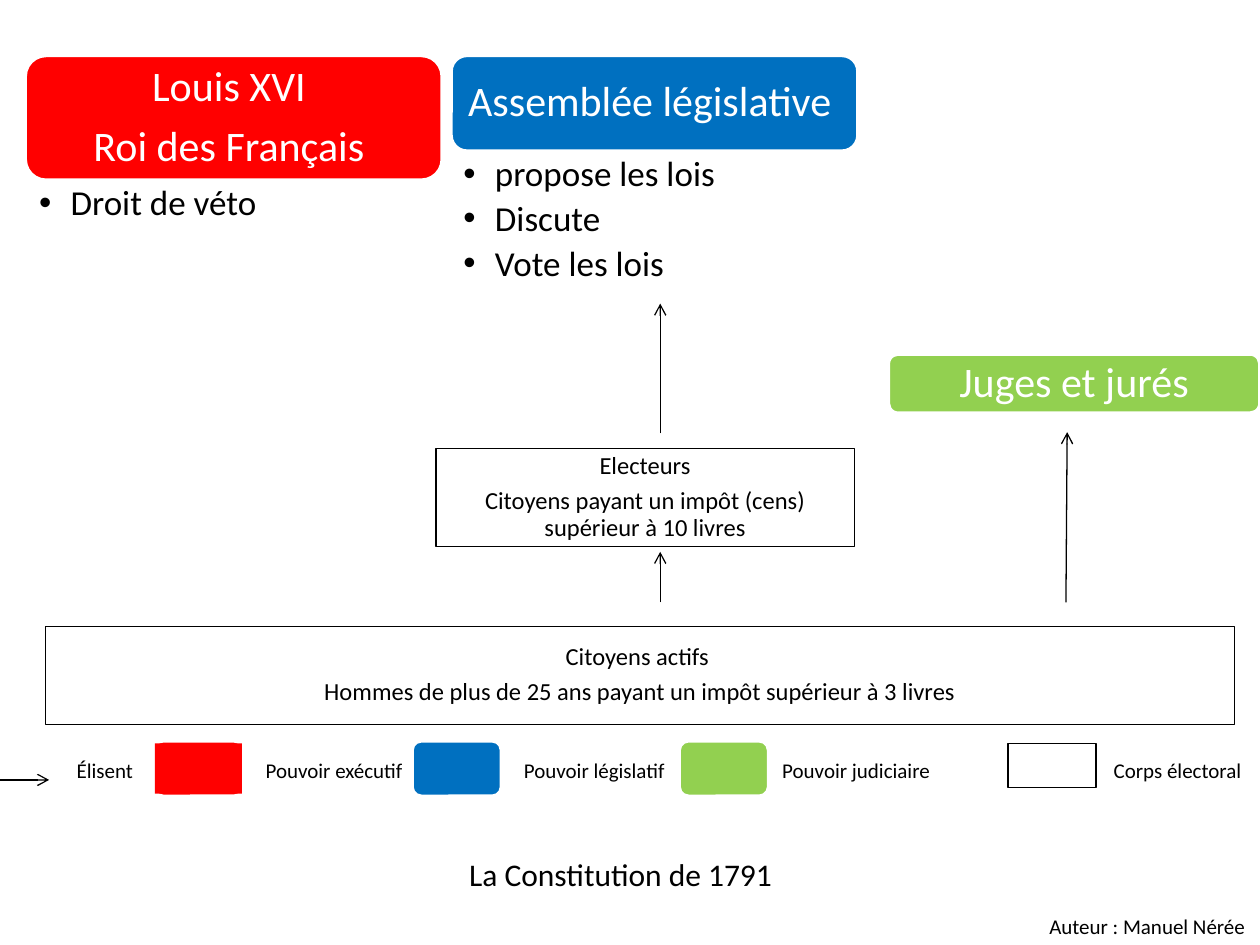
"""Builds a one-slide diagram of the French Constitution of 1791."""
from lxml import etree
from pptx import Presentation
from pptx.dml.color import RGBColor
from pptx.enum.shapes import MSO_CONNECTOR, MSO_SHAPE
from pptx.enum.text import MSO_ANCHOR, PP_ALIGN
from pptx.oxml.ns import qn
from pptx.util import Inches, Pt

ROUND, RECT = MSO_SHAPE.ROUNDED_RECTANGLE, MSO_SHAPE.RECTANGLE
STRAIGHT = MSO_CONNECTOR.STRAIGHT
LEFT, CENTER = PP_ALIGN.LEFT, PP_ALIGN.CENTER
TOP, MIDDLE = MSO_ANCHOR.TOP, MSO_ANCHOR.MIDDLE
RED = RGBColor(0xFF, 0x00, 0x00)
BLUE = RGBColor(0x00, 0x70, 0xC0)
GREEN = RGBColor(0x92, 0xD0, 0x50)
WHITE = RGBColor(0xFF, 0xFF, 0xFF)
BLACK = RGBColor(0x00, 0x00, 0x00)

deck = Presentation()
deck.slide_width, deck.slide_height = Inches(10), Inches(7.5)
CELL = deck.slide_width / 100
slide = deck.slides.add_slide(deck.slide_layouts[6])
shapes = slide.shapes


def draw(kind, area, fill=None, line=None, width=0.75):
    spot = [round(n * CELL) for n in area]
    box = shapes.add_shape(kind, *spot) if kind else shapes.add_textbox(*spot)
    if kind:
        box.shadow.inherit = False
        if fill is None:
            box.fill.background()
        else:
            box.fill.solid()
            box.fill.fore_color.rgb = fill
        if line is None:
            box.line.fill.background()
        else:
            box.line.color.rgb = line
            box.line.width = Pt(width)
    return box


def write(text, box, size=12, color=BLACK, align=LEFT, anchor=TOP, wrap=True,
          pad=(1, 0.5, 1, 0.5), lead=None, after=None, bullet=False):
    frame = box.text_frame
    frame.word_wrap, frame.vertical_anchor = wrap, anchor
    (frame.margin_left, frame.margin_top,
     frame.margin_right, frame.margin_bottom) = [round(n * CELL) for n in pad]
    for i, words in enumerate(text.split("\n")):
        para = frame.add_paragraph() if i else frame.paragraphs[0]
        para.alignment = align
        if lead:
            para.line_spacing, para.space_after = lead, Pt(after)
        if bullet:
            props = para._p.get_or_add_pPr()
            props.set("marL", str(Inches(0.25)))
            props.set("indent", str(-Inches(0.25)))
            etree.SubElement(props, qn("a:buFont")).set("typeface", "Arial")
            etree.SubElement(props, qn("a:buChar")).set("char", "•")
        run = para.add_run()
        run.text = words
        run.font.name, run.font.size = "Calibri", Pt(size)
        run.font.color.rgb = color


powers = [
    ("Louis XVI \nRoi des Français ", (2, 4.4, 33.1, 9.9), RED),
    ("Assemblée législative ", (35.8, 4.4, 32.3, 7.6), BLUE),
    ("Juges et jurés", (70.5, 28.1, 29.5, 4.7), GREEN),
]
for text, area, fill in powers:
    write(text, draw(ROUND, area, fill, WHITE, 2), size=24, color=WHITE,
          align=CENTER, anchor=MIDDLE, pad=[1] * 4, lead=0.9, after=8.4)

roles = [
    ("Droit de véto", (2, 14.4, 33.1, 7.2), 1.1),
    ("propose les lois\nDiscute\nVote les lois", (35.8, 12.1, 32.3, 11.2), 1),
]
for text, area, left in roles:
    write(text, draw(None, area), size=20, pad=(left, 0.3, 1.6, 0.3),
          lead=0.9, after=4, bullet=True)

voters = [
    ("Citoyens actifs \n"
     "Hommes de plus de 25 ans payant un impôt supérieur à 3 livres",
     (3.6, 49.7, 94.4, 7.8)),
    ("Electeurs\nCitoyens payant un impôt (cens) supérieur à 10 livres",
     (34.6, 35.6, 33.2, 7.8)),
]
for text, area in voters:
    write(text, draw(RECT, area, line=BLACK), size=14, align=CENTER,
          anchor=MIDDLE, pad=[1] * 4, lead=0.9, after=4.9)

arrows = [
    (52.4, 47.8, 52.4, 43.8),
    (52.4, 34.4, 52.4, 24.1),
    (84.6, 47.8, 84.7, 34.3),
    (0, 61.9, 3.9, 61.9),
]
for ends in arrows:
    arrow = shapes.add_connector(STRAIGHT, *[round(n * CELL) for n in ends])
    arrow.line.color.rgb, arrow.line.width = BLACK, Pt(0.75)
    line = arrow.line._get_or_add_ln()
    etree.SubElement(line, qn("a:tailEnd")).set("type", "arrow")
    etree.SubElement(arrow._element.spPr, qn("a:effectLst"))

for left, fill in [(12.2, RED), (32.7, BLUE), (53.9, GREEN)]:
    draw(ROUND, (left, 58.8, 7.1, 4.4), fill, WHITE, 2)
draw(RECT, (12.3, 59, 6.9, 4), RED)
draw(RECT, (80, 59, 7, 3.5), line=BLACK)

legend = [
    ("Élisent", 5.1, 6.9),
    ("Pouvoir exécutif", 20.1, 13.3),
    ("Pouvoir législatif", 40.6, 14),
    ("Pouvoir judiciaire", 61.1, 14.1),
    ("Corps électoral", 87.4, 12.5),
]
for text, left, width in legend:
    write(text, draw(None, (left, 59.6, width, 3)), wrap=False)

write("La Constitution de 1791 ", draw(None, (27.9, 67.4, 43.3, 4)),
      size=18, align=CENTER)
write("Auteur : Manuel Nérée", draw(None, (82.3, 72, 17.7, 3)))

deck.save("out.pptx")
